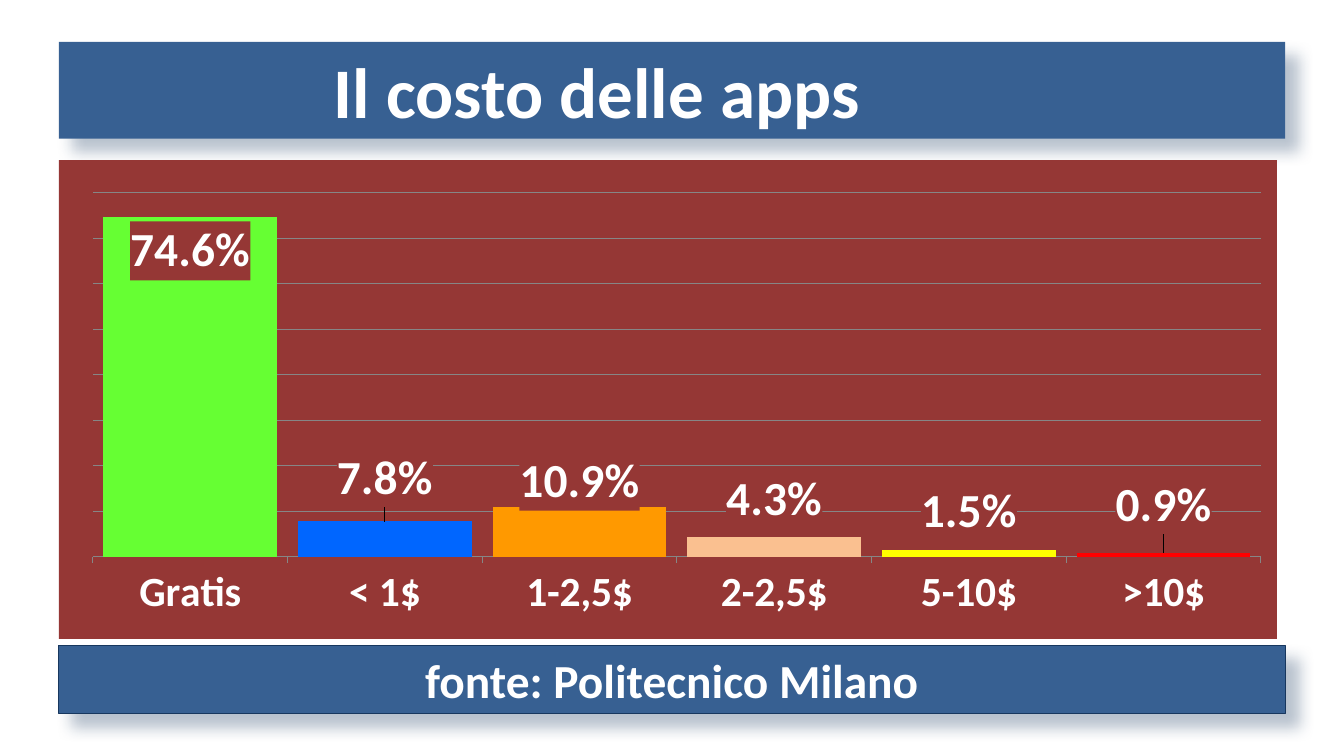
from copy import deepcopy

from pptx import Presentation
from pptx.chart.data import CategoryChartData
from pptx.dml.color import RGBColor
from pptx.enum.chart import XL_CHART_TYPE, XL_LABEL_POSITION, XL_TICK_MARK
from pptx.enum.shapes import MSO_SHAPE
from pptx.enum.text import MSO_AUTO_SIZE, PP_ALIGN
from pptx.oxml import parse_xml
from pptx.oxml.ns import nsdecls, qn
from pptx.util import Cm, Pt

COLUMN = XL_CHART_TYPE.COLUMN_CLUSTERED
INSIDE = XL_LABEL_POSITION.INSIDE_END
OUT, NONE = XL_TICK_MARK.OUTSIDE, XL_TICK_MARK.NONE
RECT = MSO_SHAPE.RECTANGLE
GROW = MSO_AUTO_SIZE.SHAPE_TO_FIT_TEXT
LEFT, CENTER = PP_ALIGN.LEFT, PP_ALIGN.CENTER

BLUE, NAVY, WINE, WHITE, GREY = "376092", "17375E", "953735", "FFFFFF", "868686"
COSTS = [
    ("Gratis", 0.746, "66FF33", 0),
    ("< 1$", 0.078, "0066FF", -0.16),
    ("1-2,5$", 0.109, "FF9900", -0.125),
    ("2-2,5$", 0.043, "FAC090", -0.15),
    ("5-10$", 0.015, "FFFF00", -0.15),
    (">10$", 0.009, "FF0000", -0.17),
]


def color(text):
    """Turn a hex string into a colour."""
    return RGBColor.from_string(text)


def style(item, **values):
    """Set each given attribute on an item."""
    for name, value in values.items():
        setattr(item, name, value)


def write(font, size, bold=True, tint=WHITE):
    """Format a font."""
    style(font, name="Calibri", size=Pt(size), bold=bold)
    font.color.rgb = color(tint)


def paint(item, tint):
    """Give an item a solid fill."""
    item.fill.solid()
    item.fill.fore_color.rgb = color(tint)


def make(tag, body):
    """Build a chart element from its inner XML."""
    return parse_xml(f'<c:{tag} {nsdecls("c", "a")}>{body}</c:{tag}>')


def solid(tint):
    """Build borderless solid shape properties."""
    return make("spPr", f'<a:solidFill><a:srgbClr val="{tint}"/></a:solidFill>'
                        '<a:ln><a:noFill/></a:ln>')


def place(**values):
    """Build a manual chart layout."""
    body = "".join(f'<c:{name} val="{value}"/>' for name, value in values.items())
    return make("layout", f"<c:manualLayout>{body}</c:manualLayout>")


def banner(slide, box, label, span, size, align, edge=None):
    """Draw a shadowed band with a line of text over it."""
    left, top, width, height = box
    band = slide.shapes.add_shape(RECT, *map(Cm, box))
    paint(band, BLUE)
    if edge:
        band.line.color.rgb = color(edge)
        band.line.width = Pt(0.75)
    else:
        band.line.fill.background()
    band.shadow.inherit = False
    glow = band._element.spPr.find(qn("a:effectLst"))
    glow.append(parse_xml(
        f'<a:outerShdw {nsdecls("a")} blurRad="{Pt(10)}" dist="{Pt(12)}" '
        'dir="2700000" algn="tl" rotWithShape="0">'
        f'<a:srgbClr val="{NAVY}"><a:alpha val="30000"/></a:srgbClr></a:outerShdw>'))
    start, wide = span
    text = slide.shapes.add_textbox(Cm(left + start), Cm(top), Cm(wide), Cm(height))
    style(text.text_frame, word_wrap=False, auto_size=GROW)
    line = text.text_frame.paragraphs[0]
    line.alignment = align
    run = line.add_run()
    run.text = label
    write(run.font, size)


def tag_bars(bars):
    """Label the bars and lift the labels of the low ones."""
    labels = bars.data_labels
    style(labels, number_format="0.0%", number_format_is_linked=False,
          show_value=True, position=INSIDE)
    write(labels.font, 32)
    root = labels._element
    root.find(qn("c:numFmt")).addnext(solid(WINE))
    parts = [part for part in root if part.tag != qn("c:showLeaderLines")]
    for index, (_, _, tint, lift) in enumerate(COSTS):
        paint(bars.points[index].format, tint)
        if lift:
            label = make("dLbl", f'<c:idx val="{index}"/>')
            label.append(place(x=0, y=lift))
            for part in parts:
                label.append(deepcopy(part))
            root.insert(index - 1, label)


def cost_chart(slide, box):
    """Draw the price column chart."""
    data = CategoryChartData(number_format="0.0%")
    data.categories = [cost[0] for cost in COSTS]
    data.add_series("Series 1", [cost[1] for cost in COSTS])
    chart = slide.shapes.add_chart(COLUMN, *map(Cm, box), data).chart
    style(chart, has_legend=False, has_title=False)
    write(chart.font, 10, False, "000000")
    chart._chartSpace.chart.addnext(solid(WINE))
    area = chart._chartSpace.chart.plotArea
    for old in area.findall(qn("c:layout")):
        area.remove(old)
    area.insert(0, place(layoutTarget="inner", xMode="edge", yMode="edge",
                         x=0.028, y=0.068, w=0.959, h=0.761))
    prices, shares = chart.category_axis, chart.value_axis
    style(prices, major_tick_mark=OUT, minor_tick_mark=NONE)
    write(prices.tick_labels.font, 28)
    style(shares, visible=False, has_major_gridlines=True,
          minimum_scale=0, maximum_scale=0.8, major_unit=0.1)
    style(shares.tick_labels, number_format="0%", number_format_is_linked=False)
    for part in (prices, shares.major_gridlines):
        part.format.line.color.rgb = color(GREY)
        part.format.line.width = Pt(0.75)
    plot = chart.plots[0]
    style(plot, gap_width=12, vary_by_categories=False)
    paint(plot.series[0].format, "4F81BD")
    tag_bars(plot.series[0])


def main():
    """Build and save the slide."""
    deck = Presentation()
    style(deck, slide_width=Cm(32), slide_height=Cm(18))
    slide = deck.slides.add_slide(deck.slide_layouts[6])
    banner(slide, (1.4, 1, 29.2, 2.3), "Il costo delle apps", (6.3, 13.56), 48, LEFT)
    cost_chart(slide, (1.4, 3.81, 29, 11.4))
    banner(slide, (1.4, 15.37, 29.2, 1.63), "fonte: Politecnico Milano",
           (8.42, 12.36), 32, CENTER, NAVY)
    deck.save("out.pptx")


if __name__ == "__main__":
    main()
